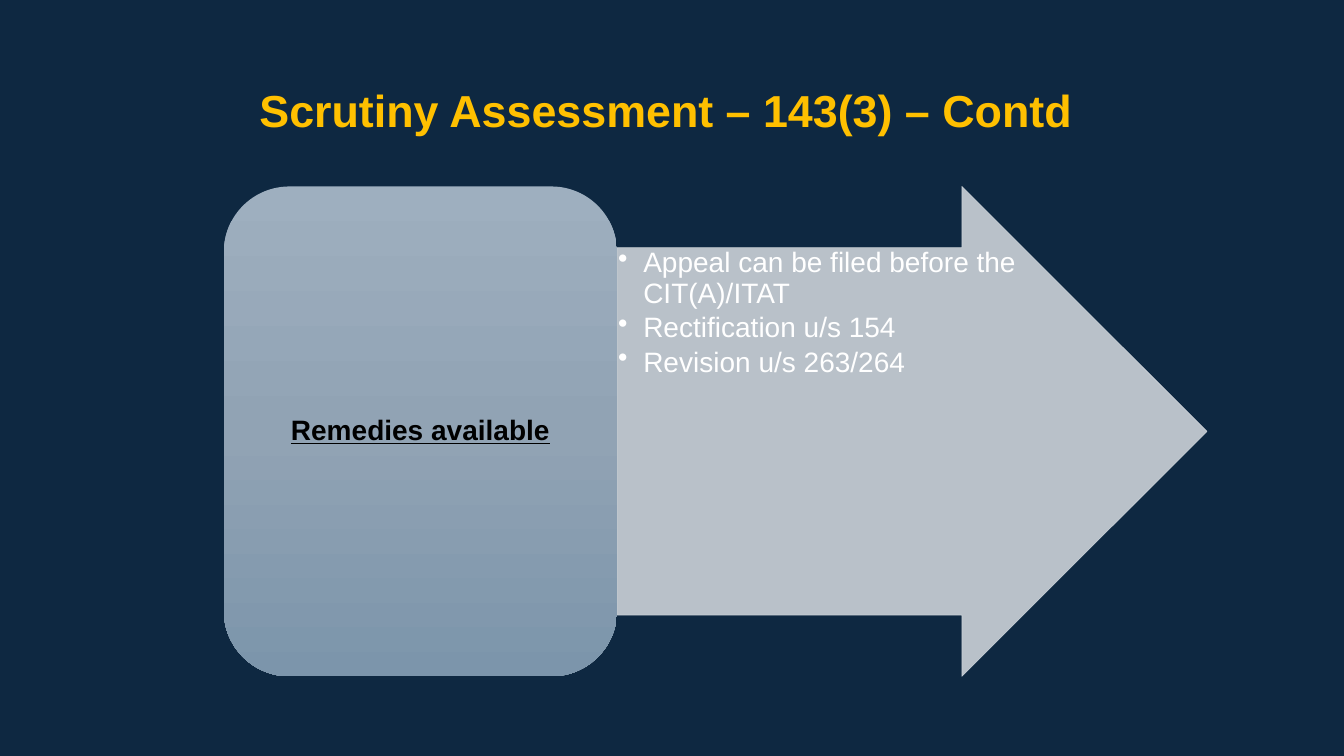
"""Build the slide on remedies after a scrutiny assessment."""
import copy

import lxml.etree
import pptx
import pptx.dml.color
import pptx.enum.shapes
import pptx.enum.text
import pptx.oxml.ns
import pptx.util

Inches = pptx.util.Inches
Pt = pptx.util.Pt
RGBColor = pptx.dml.color.RGBColor
MSO_SHAPE = pptx.enum.shapes.MSO_SHAPE
MSO_ANCHOR = pptx.enum.text.MSO_ANCHOR
PP_ALIGN = pptx.enum.text.PP_ALIGN
qn = pptx.oxml.ns.qn

NAVY = RGBColor(0x0E, 0x28, 0x41)
GOLD = RGBColor(0xFF, 0xC0, 0x00)
WHITE = RGBColor(0xFF, 0xFF, 0xFF)
BLACK = RGBColor(0x00, 0x00, 0x00)
ARROW_GREY = RGBColor(0xCC, 0xD2, 0xD8)
GRADIENT = [
    (0, RGBColor(0x9E, 0xAF, 0xBF)),
    (0.5, RGBColor(0x91, 0xA3, 0xB4)),
    (1, RGBColor(0x7C, 0x95, 0xAB)),
]
TOP, HEIGHT = 1.85, 4.86
BOX_LEFT, BOX_WIDTH, ARROW_WIDTH = 2.22, 3.9, 5.85
REMEDIES = [
    "Appeal can be filed before the CIT(A)/ITAT",
    "Rectification u/s 154",
    "Revision u/s 263/264",
]


def add_block(kind, left, width, anchor, inset_x, inset_y):
    shape = slide.shapes.add_shape(
        kind, Inches(left), Inches(TOP), Inches(width), Inches(HEIGHT))
    shape.shadow.inherit = False
    frame = shape.text_frame
    frame.word_wrap = True
    frame.vertical_anchor = anchor
    frame.margin_left = frame.margin_right = Inches(inset_x)
    frame.margin_top = frame.margin_bottom = Inches(inset_y)
    return shape


def format_paragraph(paragraph, text, size, color, alignment, bold=False):
    paragraph.text = text
    paragraph.alignment = alignment
    paragraph.line_spacing = 0.9
    paragraph.font.name = "Arial"
    paragraph.font.size = Pt(size)
    paragraph.font.bold = bold
    paragraph.font.color.rgb = color


presentation = pptx.Presentation()
presentation.slide_width = Inches(13.33)
presentation.slide_height = Inches(7.5)
slide = presentation.slides.add_slide(presentation.slide_layouts[5])
slide.background.fill.solid()
slide.background.fill.fore_color.rgb = NAVY

title = slide.shapes.title
title.left, title.top = Inches(0.92), Inches(0.4)
title.width, title.height = Inches(11.5), Inches(1.45)
title.text_frame.vertical_anchor = MSO_ANCHOR.MIDDLE
format_paragraph(title.text_frame.paragraphs[0],
                 "Scrutiny Assessment – 143(3) – Contd ",
                 32, GOLD, PP_ALIGN.CENTER, bold=True)

arrow = add_block(MSO_SHAPE.RIGHT_ARROW, BOX_LEFT + BOX_WIDTH, ARROW_WIDTH,
                  MSO_ANCHOR.TOP, 0.01, 0.01)
arrow.adjustments[0] = 0.75
arrow.adjustments[1] = 0.5
arrow.line.width = Pt(0.5)
for fill in (arrow.fill, arrow.line.fill):
    fill.solid()
    fill.fore_color.rgb = ARROW_GREY
for color in arrow._element.spPr.iter(qn("a:srgbClr")):
    lxml.etree.SubElement(color, qn("a:alpha"), val="90000")

for index, remedy in enumerate(REMEDIES):
    frame = arrow.text_frame
    paragraph = frame.add_paragraph() if index else frame.paragraphs[0]
    format_paragraph(paragraph, remedy, 20, WHITE, PP_ALIGN.LEFT)
    paragraph.level = 1
    paragraph.space_after = Pt(3)
    properties = paragraph._p.get_or_add_pPr()
    properties.set("marL", str(Inches(0.25)))
    properties.set("indent", str(Inches(-0.25)))
    bullet = lxml.etree.Element(qn("a:buChar"), char="•")
    properties.find(qn("a:defRPr")).addprevious(bullet)

box = add_block(MSO_SHAPE.ROUNDED_RECTANGLE, BOX_LEFT, BOX_WIDTH,
                MSO_ANCHOR.MIDDLE, 0.08, 0.04)
box.line.fill.background()
box.fill.gradient()
box.fill.gradient_angle = 270
first_stop = next(box._element.spPr.iter(qn("a:gs")))
first_stop.addnext(copy.deepcopy(first_stop))
for stop, (position, color) in zip(box.fill.gradient_stops, GRADIENT):
    stop.position = position
    stop.color.rgb = color
heading = box.text_frame.paragraphs[0]
format_paragraph(heading, "Remedies available", 20, BLACK, PP_ALIGN.CENTER, bold=True)
heading.font.underline = True

presentation.save("out.pptx")
